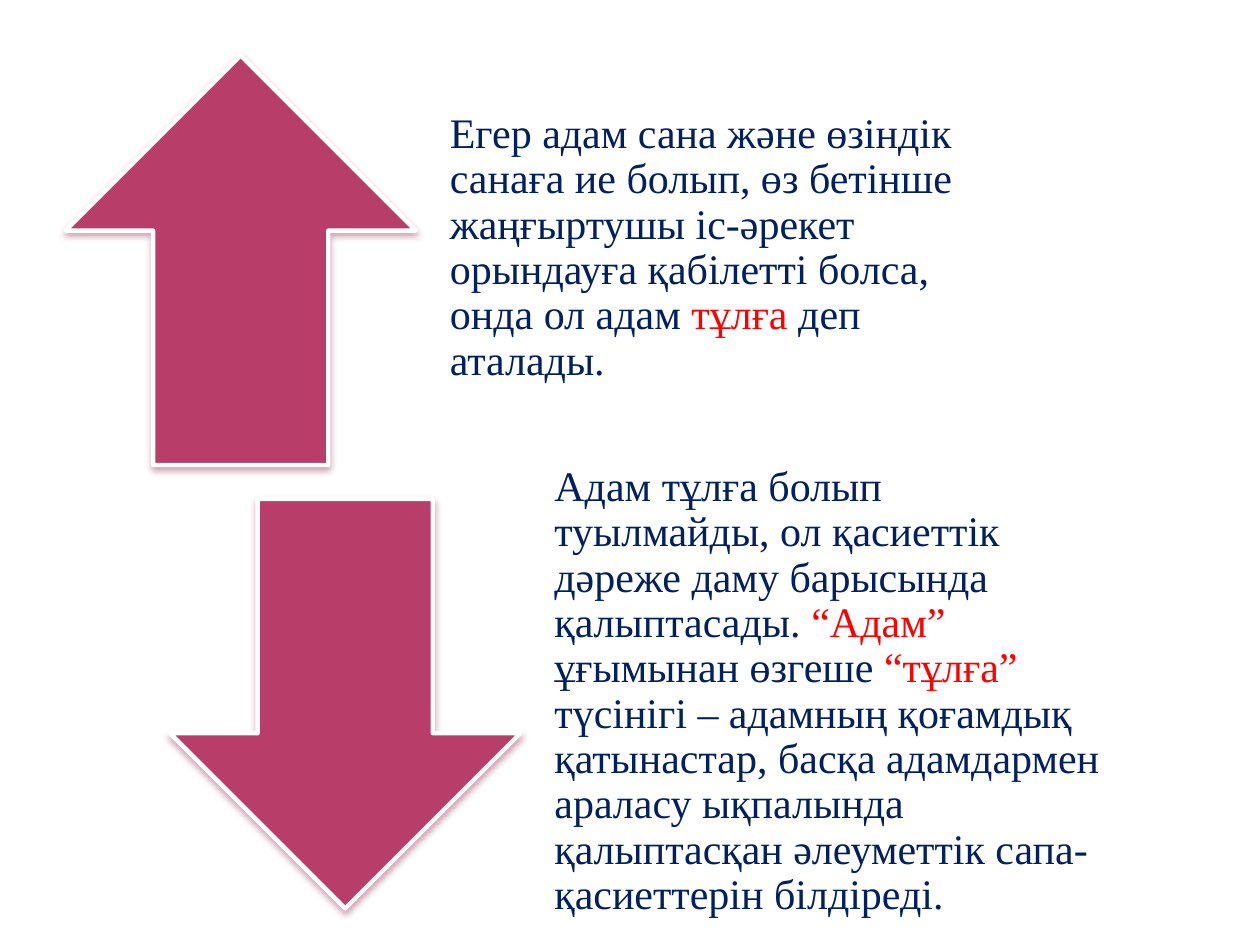
from lxml.etree import SubElement
from pptx import Presentation
from pptx.dml.color import RGBColor
from pptx.enum.shapes import MSO_SHAPE as SHAPE
from pptx.enum.text import MSO_ANCHOR as ANCHOR
from pptx.oxml.ns import qn
from pptx.util import Inches, Pt

NAVY, RED, ROSE, WHITE, SHADOW = "002060", "FF0000", "B83D68", "FFFFFF", "7F1238"
FONT = "Times New Roman"
ARROW_W, TEXT_W, ROW_H = 2.78, 4.72, 3.25
LEFT, TOP, STEP_X, STEP_Y, GAP = 0.52, 0.44, 0.83, 3.52, 0.08

STATEMENTS = [
    (SHAPE.UP_ARROW, [
        ("Егер адам сана жəне өзіндік санаға ие болып, өз бетінше жаңғыртушы "
         "іс-əрекет орындауға қабілетті болса, онда ол адам ", NAVY),
        ("тұлға ", RED),
        ("деп аталады.", NAVY),
    ]),
    (SHAPE.DOWN_ARROW, [
        ("Адам тұлға болып туылмайды, ол қасиеттік дəреже даму барысында "
         "қалыптасады. ", NAVY),
        ("“Адам” ", RED),
        ("ұғымынан өзгеше ", NAVY),
        ("“тұлға” ", RED),
        ("түсінігі – адамның қоғамдық қатынастар, басқа адамдармен араласу "
         "ықпалында қалыптасқан əлеуметтік сапа-қасиеттерін білдіреді.", NAVY),
    ]),
]


def rgb(color):
    """Turn a hex string into a colour."""
    return RGBColor.from_string(color)


def add_shadow(sp):
    """Give a shape a soft shadow that falls straight down."""
    sp.shadow.inherit = False
    effects = sp._element.spPr.find(qn("a:effectLst"))
    shadow = SubElement(effects, qn("a:outerShdw"), blurRad=str(Pt(4)), dist=str(Pt(2)),
                        dir="5400000", rotWithShape="0")
    color = SubElement(shadow, qn("a:srgbClr"), val=SHADOW)
    SubElement(color, qn("a:alpha"), val="38000")


def add_arrow(s, kind, x, y):
    """Draw a block arrow."""
    sp = s.shapes.add_shape(kind, Inches(x), Inches(y), Inches(ARROW_W), Inches(ROW_H))
    sp.fill.solid()
    sp.fill.fore_color.rgb = rgb(ROSE)
    sp.line.color.rgb = rgb(WHITE)
    sp.line.width = Pt(2.5)
    add_shadow(sp)


def add_statement(s, runs, x, y):
    """Write a paragraph of coloured runs beside its arrow."""
    sp = s.shapes.add_textbox(Inches(x), Inches(y), Inches(TEXT_W), Inches(ROW_H))
    tf = sp.text_frame
    tf.word_wrap = True
    tf.vertical_anchor = ANCHOR.MIDDLE
    tf.margin_left = tf.margin_right = tf.margin_bottom = Inches(0.19)
    tf.margin_top = 0
    p = tf.paragraphs[0]
    p.line_spacing = 0.9
    for text, color in runs:
        r = p.add_run()
        r.text = text
        r.font.name = FONT
        r.font.size = Pt(24)
        r.font.color.rgb = rgb(color)


def main():
    """Build the slide and save it."""
    prs = Presentation()
    prs.slide_width, prs.slide_height = Inches(10), Inches(7.5)
    s = prs.slides.add_slide(prs.slide_layouts[6])
    for i, (kind, runs) in enumerate(STATEMENTS):
        x, y = LEFT + i * STEP_X, TOP + i * STEP_Y
        add_arrow(s, kind, x, y)
        add_statement(s, runs, x + ARROW_W + GAP, y)
    prs.save("out.pptx")


if __name__ == "__main__":
    main()
